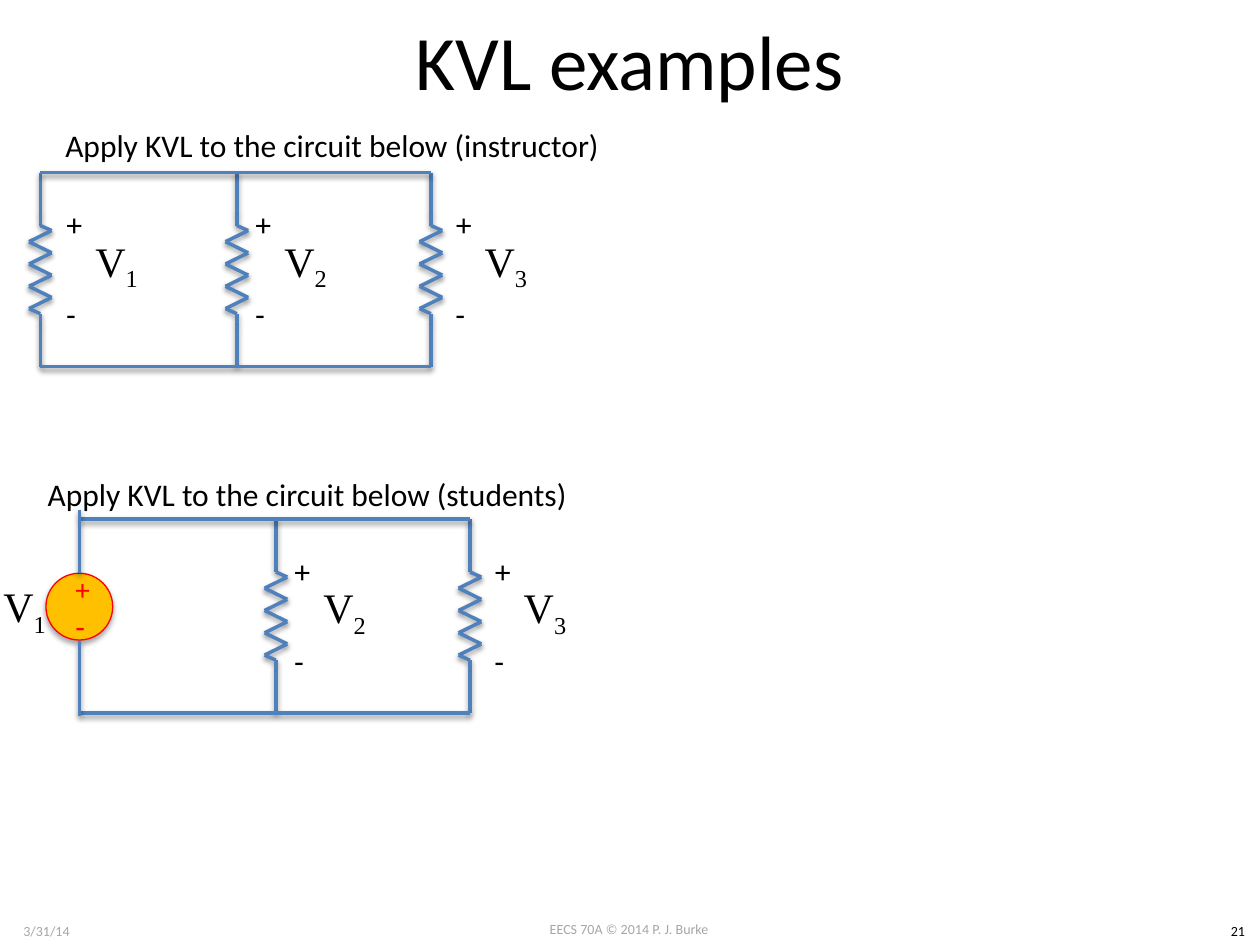
from lxml import etree
from pptx import Presentation
from pptx import util as u
from pptx.dml.color import RGBColor
from pptx.enum import shapes, text
from pptx.oxml import ns

BLACK, GREY, BLUE, RED, AMBER = "000000", "A6A6A6", "4F81BD", "FF0000", "FFC000"
SANS, SERIF = "Calibri", "Times New Roman"
CENTER, LEFT = text.PP_ALIGN.CENTER, text.PP_ALIGN.LEFT
WIDTH, HEIGHT = 3.1, 1.54  # outline of a circuit
MIDDLE = 1.56  # middle branch, from the left wire


def rgb(value):
    return RGBColor.from_string(value)


class CircuitSlide:
    def __init__(self, slide):
        self.slide = slide

    def shadow(self, s, distance, alpha):
        """Add a soft shadow that falls straight down; distance in points."""
        effects = etree.SubElement(s._element.spPr, ns.qn("a:effectLst"))
        outer = etree.SubElement(
            effects, ns.qn("a:outerShdw"), blurRad=str(u.Pt(3.1)),
            dist=str(u.Pt(distance)), dir="5400000", rotWithShape="0")
        color = etree.SubElement(outer, ns.qn("a:srgbClr"), val=BLACK)
        etree.SubElement(color, ns.qn("a:alpha"), val=str(alpha * 1000))

    def group(self):
        return self.slide.shapes.add_group_shape()

    def text(self, x, y, w, h, words, size=18, color=BLACK, font=SANS,
             align=CENTER, middle=False, wrap=True, turn=0, parent=None):
        s = (parent or self.slide).shapes.add_textbox(
            u.Inches(x), u.Inches(y), u.Inches(w), u.Inches(h))
        s.rotation = turn
        tf = s.text_frame
        tf.word_wrap = wrap
        tf.auto_size = text.MSO_AUTO_SIZE.NONE
        tf.vertical_anchor = text.MSO_ANCHOR.MIDDLE if middle else text.MSO_ANCHOR.TOP
        p = tf.paragraphs[0]
        p.alignment = align
        for word in words if isinstance(words, tuple) else (words,):
            r = p.add_run()
            r.text = word
            r.font.name, r.font.size = font, u.Pt(size)
            r.font.color.rgb = rgb(color)
        return s

    def wire(self, start, end, parent=None):
        s = (parent or self.slide).shapes.add_connector(
            shapes.MSO_CONNECTOR.STRAIGHT, *(u.Inches(v) for v in start + end))
        s.line.color.rgb = rgb(BLUE)
        s.line.width = u.Pt(2)
        self.shadow(s, 1.6, 38)

    def voltage(self, x, y, index, parent=None):
        """Write V with its index as a subscript."""
        s = self.text(x, y, 1.19, 0.73, ("V", index), 24, font=SERIF,
                      middle=True, parent=parent)
        r = s.text_frame.paragraphs[0].runs[1]
        r.font._element.set("baseline", "-25000")

    def resistor(self, x, top):
        zigzag = [(0.09 * (-1) ** i, 0.46 + 0.0885 * i) for i in range(8)]
        points = [(0, 0), (0, 0.33), (0, 0.42), *zigzag,
                  (0, 1.12), (0, 1.21), (0, HEIGHT)]
        points = [(x + dx, top + dy) for dx, dy in points]
        group = self.group()
        for start, end in zip(points, points[1:]):
            self.wire(start, end, group)

    def label(self, x, top, index):
        """Write the voltage across a resistor, with its polarity."""
        group = self.group()
        self.voltage(x, top + 0.36, index, group)
        for sign, dy, w in (("+", 0.25, 0.33), ("-", 0.98, 0.28)):
            self.text(x + 0.09, top + dy, w, 0.4, sign, align=LEFT,
                      wrap=False, turn=180, parent=group)

    def source(self, x, top):
        group = self.group()
        s = group.shapes.add_shape(
            shapes.MSO_SHAPE.OVAL, u.Inches(x - 0.265), u.Inches(top + 0.43),
            u.Inches(0.53), u.Inches(0.53))
        s.fill.solid()
        s.fill.fore_color.rgb = rgb(AMBER)
        s.line.color.rgb = rgb(RED)
        s.line.width = u.Pt(0.75)
        self.shadow(s, 1.8, 35)
        for sign, dy, size in (("+", 0.39, 16.6), ("-", 0.68, 18)):
            self.text(x - 0.13, top + dy, 0.26, 0.33, sign, size, RED,
                      middle=True, parent=group)
        self.wire((x, top + 1.56), (x, top + 0.97), group)
        self.wire((x, top + 0.43), (x, top - 0.07), group)
        self.voltage(x - 1.03, top + 0.35, "1")

    def circuit(self, left, top, has_source):
        """Draw three parallel branches; the first may be a source."""
        branches = [("1", 0, 0.01), ("2", MIDDLE, MIDDLE - 0.05), ("3", WIDTH, WIDTH)]
        for index, dx, label_dx in branches[1 if has_source else 0:]:
            self.resistor(left + dx, top)
            self.label(left + label_dx, top, index)
        for y in (top, top + HEIGHT):
            self.wire((left, y), (left + WIDTH, y))
        if has_source:
            self.source(left, top)


def main():
    prs = Presentation()
    prs.slide_width, prs.slide_height = u.Inches(10), u.Inches(7.5)
    page = CircuitSlide(prs.slides.add_slide(prs.slide_layouts[6]))

    page.text(3.83, 7.26, 2.33, 0.24, "EECS 70A © 2014 P. J. Burke", 8, GREY)
    page.text(0, 7.27, 0.74, 0.24, "3/31/14", 8, GREY)
    page.text(9.65, 7.27, 0.35, 0.24, "21", 8)
    page.text(0.5, 0, 9, 0.95, "KVL examples", 44, middle=True)

    page.text(0.42, 0.95, 4.54, 0.4, "Apply KVL to the circuit below (instructor)",
              align=LEFT, wrap=False)
    page.circuit(0.32, 1.37, has_source=False)
    page.text(0.28, 3.72, 4.37, 0.4, "Apply KVL to the circuit below (students)",
              align=LEFT, wrap=False)
    page.circuit(0.63, 4.12, has_source=True)

    prs.save("out.pptx")


if __name__ == "__main__":
    main()
